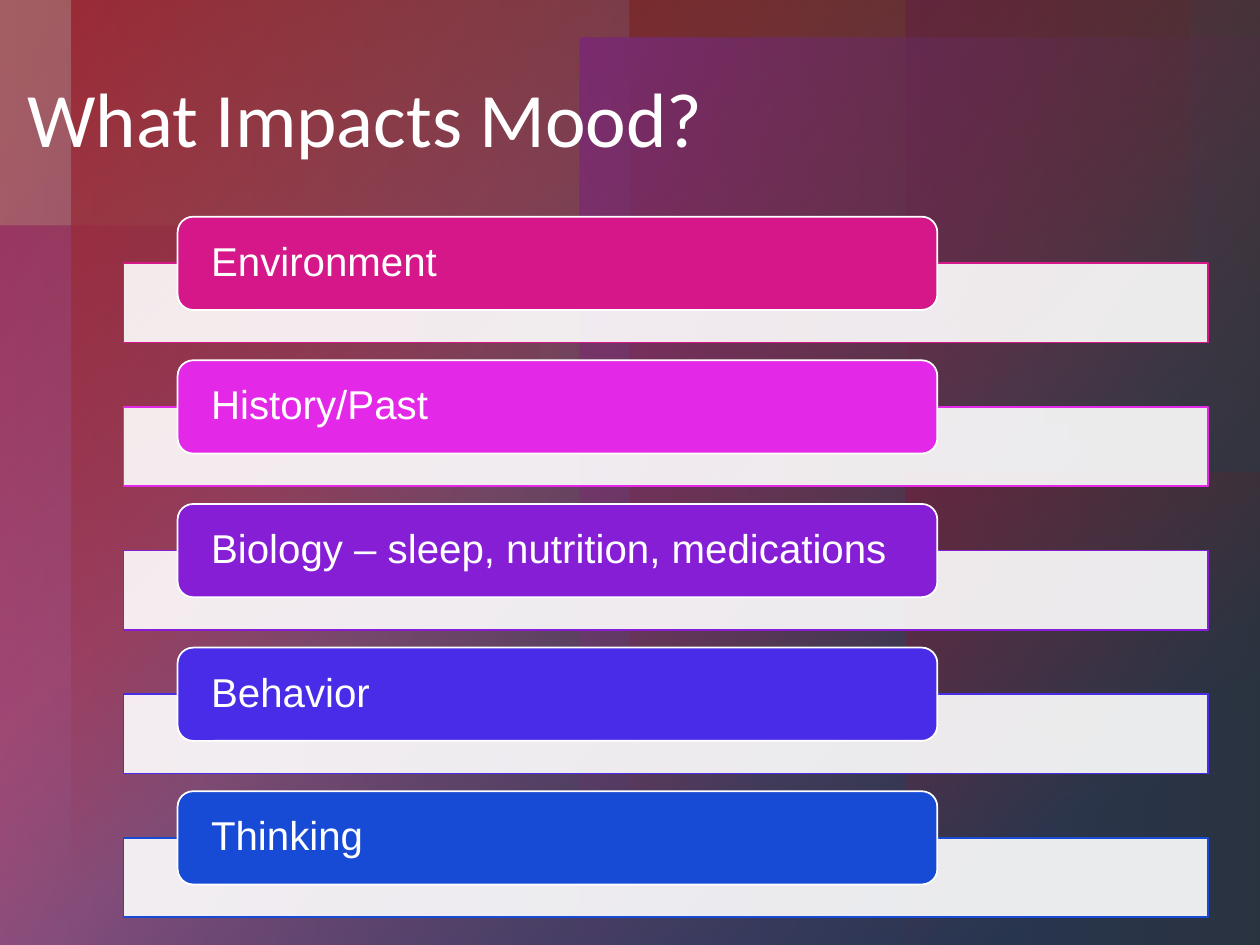
from lxml import etree
from pptx import Presentation
from pptx.dml.color import RGBColor
from pptx.enum.shapes import MSO_SHAPE
from pptx.enum.text import MSO_ANCHOR
from pptx.oxml.ns import qn
from pptx.util import Inches, Pt

RECT, ROUNDED = MSO_SHAPE.RECTANGLE, MSO_SHAPE.ROUNDED_RECTANGLE
TOP, MIDDLE = MSO_ANCHOR.TOP, MSO_ANCHOR.MIDDLE

# Content
TITLE = "What Impacts Mood?"
FACTORS = [
    ("Environment", "D51789"),
    ("History/Past", "E329E7"),
    ("Biology – sleep, nutrition, medications", "861ED6"),
    ("Behavior", "482CE7"),
    ("Thinking", "174AD5"),
]

THEME = dict(white="FFFFFF", shade="302E1B", red="E7294C", pink="D51789",
             magenta="E329E7", title_font="Calibri", body_font="Arial",
             title_size=44, body_size=23, line=1)
BACKDROP = [(11, "174AD5", 100), (67, "EF6BBA", 100), (98, "F17F94", 100)]

# Slide and grid, in inches
W, H = 10, 7.5
ROW_TOP, ROW_STEP = 1.72, 1.14
CARD_X, CARD_W, CARD_H = 1.41, 6.03, 0.74
BAR_X, BAR_W, BAR_H, BAR_DROP = 0.98, 8.61, 0.63, 0.37
CORNER_W, CORNER_H = 2.81, H / 2

# Glows fade out from their top left corner: box, colour, opacity
GLOWS = [
    ((0, 1.79, 4.28, 5.71), THEME["pink"], 60),
    ((W / 2, 0, 4.43, H), THEME["red"], 100),
    ((0.57, 0, 4.43, H), THEME["red"], 100),
    ((W - CORNER_W, H / 2, CORNER_W, CORNER_H), THEME["pink"], 100),
    ((W - CORNER_W, 0, CORNER_W, CORNER_H), THEME["pink"], 100),
    ((4.6, 0.3, 5.4, 7.2), THEME["magenta"], 100),
]


def set_alpha(color, opacity):
    etree.SubElement(color, qn("a:alpha"), val=str(opacity * 1000))


def set_gradient(fill, root, stops, angle=None):
    """Give stops as (position, colour, opacity); no angle means radial."""
    fill.gradient()
    grad = next(root.iter(qn("a:gradFill")))
    for child in list(grad):
        grad.remove(child)
    gs_list = etree.SubElement(grad, qn("a:gsLst"))
    for pos, color, opacity in stops:
        gs = etree.SubElement(gs_list, qn("a:gs"), pos=str(pos * 1000))
        set_alpha(etree.SubElement(gs, qn("a:srgbClr"), val=color), opacity)
    if angle is None:
        radial = etree.SubElement(grad, qn("a:path"), path="circle")
        etree.SubElement(radial, qn("a:fillToRect"), r="100000", b="100000")
    else:
        etree.SubElement(grad, qn("a:lin"), ang=str(angle * 60000), scaled="0")


def add_box(s, kind, box, fill=None, line=None, opacity=100):
    sp = s.shapes.add_shape(kind, *(Inches(v) for v in box))
    sp.shadow.inherit = False
    if fill:
        sp.fill.solid()
        sp.fill.fore_color.rgb = RGBColor.from_string(fill)
        if opacity < 100:
            set_alpha(next(sp.element.spPr.iter(qn("a:srgbClr"))), opacity)
    if line:
        sp.line.color.rgb = RGBColor.from_string(line)
        sp.line.width = Pt(THEME["line"])
    else:
        sp.line.fill.background()
    return sp


def put_text(sp, text, font, size, anchor, inset_x, inset_y):
    tf = sp.text_frame
    tf.word_wrap = True
    tf.vertical_anchor = anchor
    tf.margin_left = tf.margin_right = Inches(inset_x)
    tf.margin_top = tf.margin_bottom = Inches(inset_y)
    p = tf.paragraphs[0]
    p.alignment = 1
    p.line_spacing = 0.9
    r = p.add_run()
    r.text = text
    r.font.name, r.font.size = font, Pt(size)
    r.font.color.rgb = RGBColor.from_string(THEME["white"])


def main():
    prs = Presentation()
    prs.slide_width, prs.slide_height = Inches(W), Inches(H)
    s = prs.slides.add_slide(prs.slide_layouts[6])

    # Backdrop, glows and a shade that darkens to the right
    set_gradient(s.background.fill, s.element, BACKDROP, angle=225)
    for box, color, opacity in GLOWS:
        sp = add_box(s, RECT, box)
        set_gradient(sp.fill, sp.element, [(0, color, opacity), (60, color, 0)])
    sp = add_box(s, RECT, (0, 0, W, H))
    shade = THEME["shade"]
    set_gradient(sp.fill, sp.element, [(0, shade, 40), (100, shade, 80)], angle=0)

    # Title
    title = s.shapes.add_textbox(*(Inches(v) for v in (0.12, 0.59, 9.74, 6.3)))
    put_text(title, TITLE, font=THEME["title_font"], size=THEME["title_size"],
             anchor=TOP, inset_x=0.1, inset_y=0.05)

    # One bar with a label card per factor
    for i, (name, color) in enumerate(FACTORS):
        y = ROW_TOP + i * ROW_STEP
        add_box(s, RECT, (BAR_X, y + BAR_DROP, BAR_W, BAR_H),
                fill=THEME["white"], line=color, opacity=90)
        card = add_box(s, ROUNDED, (CARD_X, y, CARD_W, CARD_H),
                       fill=color, line=THEME["white"])
        put_text(card, name, font=THEME["body_font"], size=THEME["body_size"],
                 anchor=MIDDLE, inset_x=0.23, inset_y=0)

    prs.save("out.pptx")


if __name__ == "__main__":
    main()
